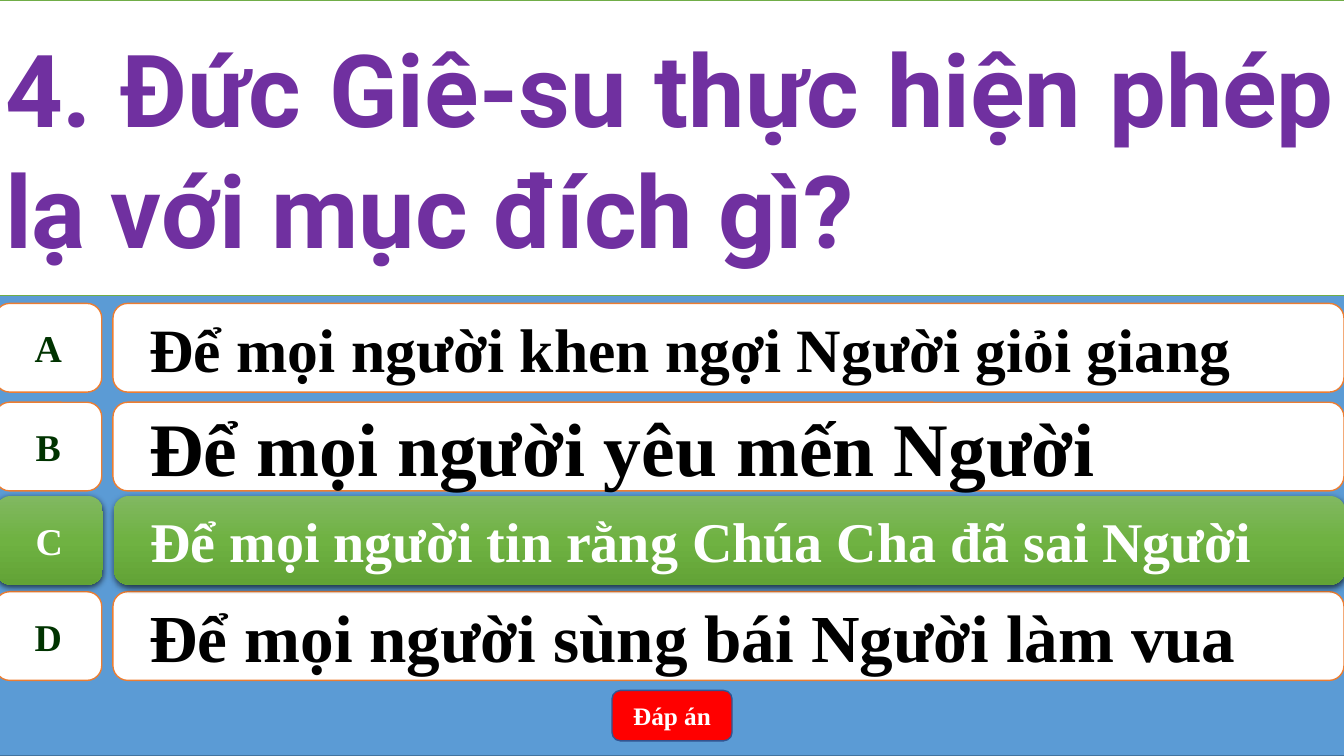
import copy
from dataclasses import dataclass

import lxml.etree
import pptx
import pptx.dml.color
import pptx.enum.shapes
import pptx.enum.text
import pptx.oxml.ns
import pptx.util

COLORS = {
    "backdrop": "5B9BD5", "backdrop_line": "43739E",
    "white": "FFFFFF", "black": "000000",
    "question": "7030A0", "question_line": "70AD47",
    "option_line": "ED7D31", "letter": "003300",
    "button": "FF0000", "button_line": "325491",
    "green_top": "81B861", "green_middle": "6FB242", "green_bottom": "62A336",
}
SERIF = "Times New Roman"
SHAPES = pptx.enum.shapes.MSO_SHAPE
ALIGN = pptx.enum.text.PP_ALIGN
Inches = pptx.util.Inches

LEFT, FULL_WIDTH = -0.05, 13.39
LETTER_WIDTH, ANSWER_OFFSET, ANSWER_WIDTH, ROW_HEIGHT = 1.06, 1.17, 12.21, 0.88


@dataclass
class Option:
    letter: str
    answer: str
    size: int
    top: float
    left: float = LEFT
    correct: bool = False


OPTIONS = [
    Option("A", "Để mọi người khen ngợi Người giỏi giang", 44, 3.01),
    Option("B", "Để mọi người yêu mến Người", 54, 3.99),
    Option("D", "Để mọi người sùng bái Người làm vua", 48, 5.87),
    Option("C", "Để mọi người tin rằng Chúa Cha đã sai Người", 40, 4.92, -0.04, True),
]


def rgb(name: str) -> pptx.dml.color.RGBColor:
    return pptx.dml.color.RGBColor.from_string(COLORS[name])


def paint(shape, fill: str, line: str) -> None:
    shape.fill.solid()
    shape.fill.fore_color.rgb = rgb(fill)
    shape.line.color.rgb = rgb(line)
    shape.line.width = pptx.util.Pt(1)


def add_box(shapes, kind, left: float, top: float, width: float, height: float):
    box = shapes.add_shape(kind, Inches(left), Inches(top), Inches(width), Inches(height))
    box.shadow.inherit = False
    return box


def write(shape, text: str, size: int, color: str, font: str = SERIF,
          align=ALIGN.CENTER, wrap: bool = True):
    frame = shape.text_frame
    frame.word_wrap = wrap
    frame.auto_size = pptx.enum.text.MSO_AUTO_SIZE.NONE
    frame.vertical_anchor = pptx.enum.text.MSO_ANCHOR.MIDDLE
    paragraph = frame.paragraphs[0]
    paragraph.alignment = align
    run = paragraph.add_run()
    run.text = text
    run.font.name = font
    run.font.size = pptx.util.Pt(size)
    run.font.bold = True
    run.font.color.rgb = rgb(color)
    return paragraph


def highlight(shape) -> None:
    """Green three-stop gradient with a soft shadow below."""
    shape.line.fill.background()
    shape.fill.gradient()
    shape.fill.gradient_angle = 270
    stop_list = shape.element.spPr.find(".//" + pptx.oxml.ns.qn("a:gsLst"))
    stop_list.insert(1, copy.deepcopy(stop_list[0]))
    names = ("green_top", "green_middle", "green_bottom")
    for index, (stop, name) in enumerate(zip(shape.fill.gradient_stops, names)):
        stop.position = index / 2
        stop.color.rgb = rgb(name)
    effects = shape.element.spPr.find(pptx.oxml.ns.qn("a:effectLst"))
    shadow = lxml.etree.SubElement(
        effects, pptx.oxml.ns.qn("a:outerShdw"), blurRad=str(pptx.util.Pt(4.5)),
        dist=str(pptx.util.Pt(1.5)), dir="5400000", algn="ctr", rotWithShape="0")
    color = lxml.etree.SubElement(shadow, pptx.oxml.ns.qn("a:srgbClr"), val=COLORS["black"])
    lxml.etree.SubElement(color, pptx.oxml.ns.qn("a:alpha"), val="63000")


def add_option(slide, option: Option) -> None:
    row = slide.shapes.add_group_shape().shapes
    letter = add_box(row, SHAPES.FLOWCHART_ALTERNATE_PROCESS,
                     option.left, option.top, LETTER_WIDTH, ROW_HEIGHT)
    answer = add_box(row, SHAPES.ROUNDED_RECTANGLE, option.left + ANSWER_OFFSET,
                     option.top, ANSWER_WIDTH, ROW_HEIGHT)
    for box in (letter, answer):
        if option.correct:
            highlight(box)
        else:
            paint(box, "white", "option_line")
    write(letter, option.letter, 27, "white" if option.correct else "letter", wrap=False)
    line = write(answer, option.answer, option.size,
                 "white" if option.correct else "black", align=ALIGN.LEFT)
    # Hanging indent of the answer text
    indents = line._p.get_or_add_pPr()
    indents.set("marL", str(Inches(0.5)))
    indents.set("indent", str(Inches(-0.28)))


def main() -> None:
    deck = pptx.Presentation()
    deck.slide_width, deck.slide_height = Inches(13.33), Inches(7.5)
    slide = deck.slides.add_slide(deck.slide_layouts[5])

    # Blue backdrop
    backdrop = add_box(slide.shapes, SHAPES.RECTANGLE, LEFT, 0, FULL_WIDTH, 7.5)
    paint(backdrop, "backdrop", "backdrop_line")

    # Answer button
    button = add_box(slide.shapes, SHAPES.ROUNDED_RECTANGLE, 6.07, 6.85, 1.19, 0.5)
    paint(button, "button", "button_line")
    write(button, "Đáp án", 18, "white")

    # Options, with the correct one on top
    for option in OPTIONS:
        add_option(slide, option)

    # Question, in front of the backdrop
    question = slide.shapes.title
    question.left, question.top = Inches(LEFT), Inches(0)
    question.width, question.height = Inches(FULL_WIDTH), Inches(2.93)
    paint(question, "white", "question_line")
    write(question, "4. Đức Giê-su thực hiện phép lạ với mục đích gì?", 72,
          "question", "Roboto", ALIGN.JUSTIFY)
    backdrop.element.getparent().append(question.element)

    deck.save("out.pptx")


if __name__ == "__main__":
    main()
